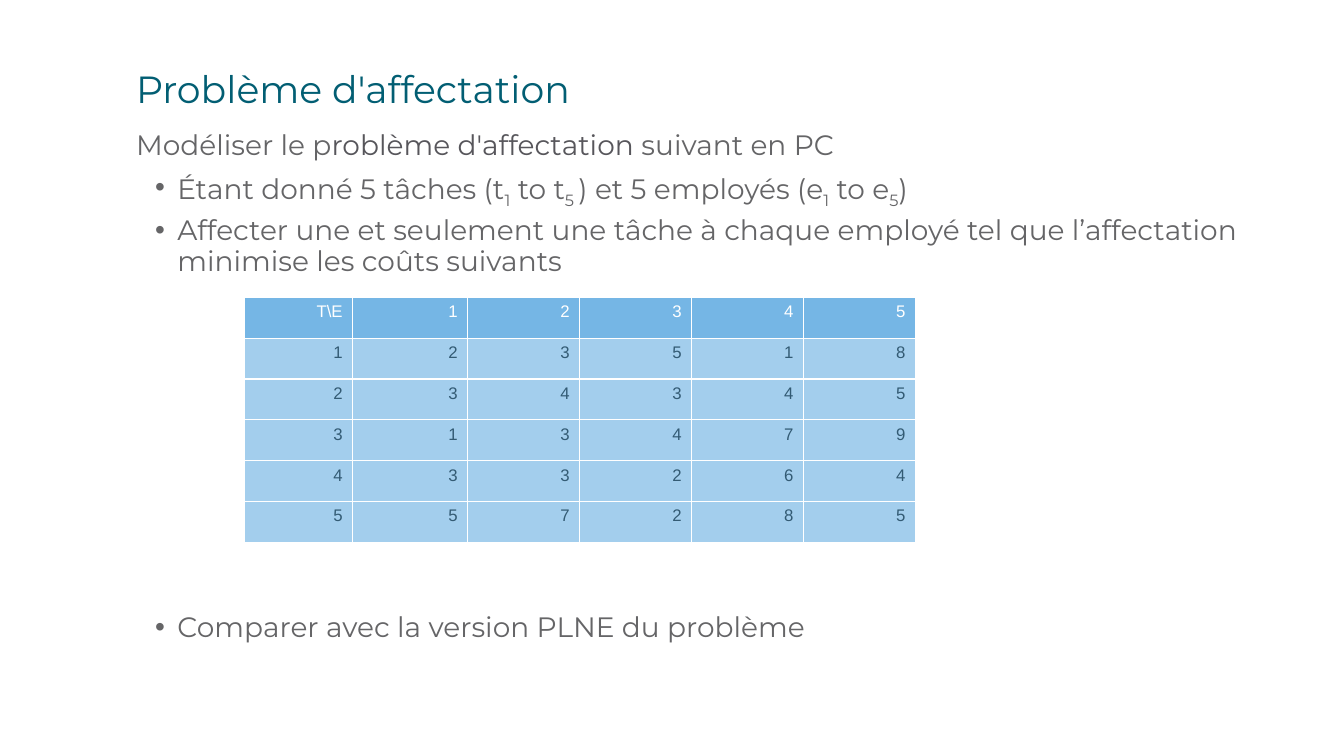
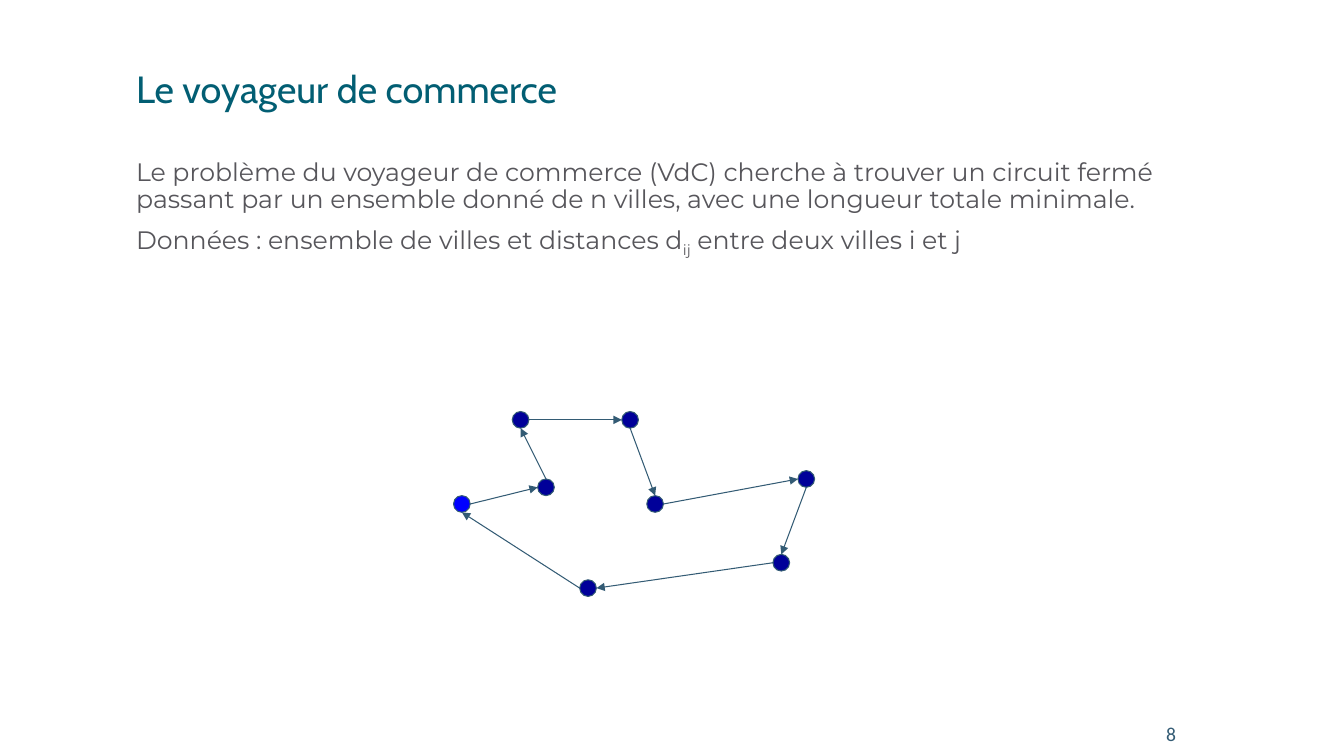
from dataclasses import dataclass
from typing import NamedTuple

from lxml.etree import SubElement
from pptx import Presentation
from pptx.dml.color import RGBColor
from pptx.enum.shapes import MSO_CONNECTOR, MSO_SHAPE
from pptx.enum.text import MSO_ANCHOR, PP_ALIGN
from pptx.oxml.ns import qn
from pptx.util import Cm, Pt

COLORS = {
    "title": "025E73",
    "text": "656567",
    "dark_text": "57565B",
    "ink": "335B74",
    "white": "FFFFFF",
    "header_cell": "75B6E5",
    "cost_cell": "A3CEED",
    "start_city": "0000FF",
    "city": "000099",
}
MAIN_FONT = "Montserrat"
LEFT = 3.18  # common left edge of titles and bodies, in cm
INSET = 0.25
CITY_SIZE = 0.42


class Span(NamedTuple):
    text: str
    color: str
    sub: bool = False


@dataclass
class Line:
    spans: list[Span]
    bullet: bool = False
    before: float = 7.5


@dataclass
class City:
    x: float
    y: float
    entry: str
    leave: str
    color: str = "city"


def rgb(name: str) -> RGBColor:
    return RGBColor.from_string(COLORS[name])


def style_font(font, name: str, size: float, color: str) -> None:
    font.name, font.size = name, Pt(size)
    font.color.rgb = rgb(color)


def add_frame(slide, left: float, top: float, width: float, height: float,
              inset_x: float, inset_y: float):
    frame = slide.shapes.add_textbox(
        Cm(left), Cm(top), Cm(width), Cm(height)).text_frame
    frame.word_wrap = True
    frame.vertical_anchor = MSO_ANCHOR.TOP
    frame.margin_left = frame.margin_right = Cm(inset_x)
    frame.margin_top = frame.margin_bottom = Cm(inset_y)
    return frame


def add_title(slide, text: str, font: str) -> None:
    frame = add_frame(slide, LEFT, 1.65, 29.2, 1.9, INSET, 0.13)
    frame.text = text
    paragraph = frame.paragraphs[0]
    paragraph.line_spacing = 0.9
    style_font(paragraph.runs[0].font, font, 27, "title")


def add_bullet(paragraph) -> None:
    properties = paragraph._p.get_or_add_pPr()
    properties.set("marL", str(Cm(1.04)))
    properties.set("indent", str(Cm(-0.56)))
    SubElement(properties, qn("a:buFont"), typeface="Arial")
    SubElement(properties, qn("a:buChar"), char="•")


def add_body(slide, top: float, width: float, height: float, size: float,
             lines: list[Line]) -> None:
    frame = add_frame(slide, LEFT, top, width, height, INSET, INSET)
    for index, line in enumerate(lines):
        paragraph = frame.add_paragraph() if index else frame.paragraphs[0]
        if line.bullet:
            add_bullet(paragraph)
        paragraph.line_spacing = 0.9
        paragraph.space_before = Pt(line.before if index else 0)
        for span in line.spans:
            run = paragraph.add_run()
            run.text = span.text
            style_font(run.font, MAIN_FONT, size, span.color)
            if span.sub:
                run._r.get_or_add_rPr().set("baseline", "-25000")


def add_page_number(slide, number: str) -> None:
    frame = add_frame(slide, 29.11, 18.2, 0.53, 0.56, 0, 0)
    frame.text = number
    paragraph = frame.paragraphs[0]
    paragraph.alignment = PP_ALIGN.RIGHT
    style_font(paragraph.runs[0].font, "Calibri", 14, "ink")


def set_borders(cell, color: str, width: float) -> None:
    properties = cell._tc.get_or_add_tcPr()
    for side in ("a:lnL", "a:lnR", "a:lnT", "a:lnB"):
        border = SubElement(properties, qn(side), w=str(Pt(width)))
        fill = SubElement(border, qn("a:solidFill"))
        SubElement(fill, qn("a:srgbClr"), val=COLORS[color])


def add_cost_table(slide, costs: list[list[int]]) -> None:
    count = len(costs)
    rows = [["T\\E", *range(1, count + 1)]]
    rows += [[task, *values] for task, values in enumerate(costs, 1)]
    widths = [2.74, 2.9] + [2.82] * (count - 1)
    row_height = 1.03
    table = slide.shapes.add_table(
        len(rows), len(widths), Cm(6.15), Cm(7.49),
        Cm(sum(widths)), Cm(row_height * len(rows))).table
    table.first_row = table.horz_banding = False
    for column, width in zip(table.columns, widths):
        column.width = Cm(width)
    for r, values in enumerate(rows):
        table.rows[r].height = Cm(row_height)
        for c, value in enumerate(values):
            cell = table.cell(r, c)
            set_borders(cell, "white", 1)
            cell.fill.solid()
            cell.fill.fore_color.rgb = rgb("cost_cell" if r else "header_cell")
            cell.text = str(value)
            paragraph = cell.text_frame.paragraphs[0]
            paragraph.alignment = PP_ALIGN.RIGHT
            style_font(paragraph.runs[0].font, "Arial", 12,
                       "ink" if r else "white")


def edge_point(city: City, side: str) -> tuple[Cm, Cm]:
    dx, dy = {"top": (0, -1), "left": (-1, 0),
              "bottom": (0, 1), "right": (1, 0)}[side]
    radius = CITY_SIZE / 2
    return Cm(city.x + dx * radius), Cm(city.y + dy * radius)


def add_route(slide, start: City, end: City) -> None:
    route = slide.shapes.add_connector(
        MSO_CONNECTOR.STRAIGHT, *edge_point(start, start.leave),
        *edge_point(end, end.entry))
    route.line.color.rgb = rgb("ink")
    route.line.width = Pt(0.75)
    SubElement(route.line._get_or_add_ln(), qn("a:tailEnd"), type="triangle")
    SubElement(route._element.spPr, qn("a:effectLst"))


def add_city(slide, city: City) -> None:
    dot = slide.shapes.add_shape(
        MSO_SHAPE.OVAL, Cm(city.x - CITY_SIZE / 2), Cm(city.y - CITY_SIZE / 2),
        Cm(CITY_SIZE), Cm(CITY_SIZE))
    dot.shadow.inherit = False
    dot.fill.solid()
    dot.fill.fore_color.rgb = rgb(city.color)
    dot.line.color.rgb = rgb("ink")
    dot.line.width = Pt(0.75)


def build_assignment(slide) -> None:
    add_title(slide, "Problème d'affectation", MAIN_FONT)
    add_body(slide, 3.05, 29.2, 13.7, 20, [
        Line([Span("Modéliser le p", "text"),
              Span("roblème d'affectation", "dark_text"),
              Span(" suivant en PC", "text")]),
        Line([Span("Étant donné 5 tâches (t", "text"),
              Span("1", "text", True), Span(" to t", "text"),
              Span("5 ", "text", True), Span(") et 5 employés (e", "text"),
              Span("1", "text", True), Span(" to e", "text"),
              Span("5", "text", True), Span(")", "text")], bullet=True),
        Line([Span("Affecter une et seulement une tâche à chaque employé tel "
                   "que l’affectation minimise les coûts suivants", "text")],
             bullet=True),
        # The wide gap leaves room for the cost table
        Line([Span("Comparer avec la version PLNE du problème", "text")],
             bullet=True, before=240),
    ])
    add_cost_table(slide, [
        [2, 3, 5, 1, 8],
        [3, 4, 3, 4, 5],
        [1, 3, 4, 7, 9],
        [3, 3, 2, 6, 4],
        [5, 7, 2, 8, 5],
    ])


def build_salesman(slide) -> None:
    add_title(slide, "Le voyageur de commerce", "Cabin")
    add_body(slide, 3.78, 28.58, 2.87, 18, [
        Line([Span("Le problème du voyageur de commerce (VdC) cherche à trouver "
                   "un circuit fermé passant par un ensemble donné de n villes, "
                   "avec une longueur totale minimale.", "dark_text")]),
        Line([Span("Données : ensemble de villes et distances d", "dark_text"),
              Span("ij", "dark_text", True),
              Span(" entre deux villes i et j", "dark_text")]),
    ])
    # Cities in the order of the tour
    tour = [
        City(11.64, 12.7, "bottom", "right", "start_city"),
        City(13.76, 12.28, "left", "top"),
        City(13.12, 10.58, "bottom", "right"),
        City(15.88, 10.58, "left", "bottom"),
        City(16.51, 12.7, "top", "right"),
        City(20.32, 12.07, "left", "bottom"),
        City(19.69, 14.18, "top", "left"),
        City(14.82, 14.82, "right", "left"),
    ]
    for city, following in zip(tour, tour[1:] + tour[:1]):
        add_city(slide, city)
        add_route(slide, city, following)
    add_page_number(slide, "8")


def main() -> None:
    presentation = Presentation()
    presentation.slide_width, presentation.slide_height = Cm(33.87), Cm(19.05)
    blank = presentation.slide_layouts[6]
    for build in (build_assignment, build_salesman):
        build(presentation.slides.add_slide(blank))
    presentation.save("out.pptx")


if __name__ == "__main__":
    main()
